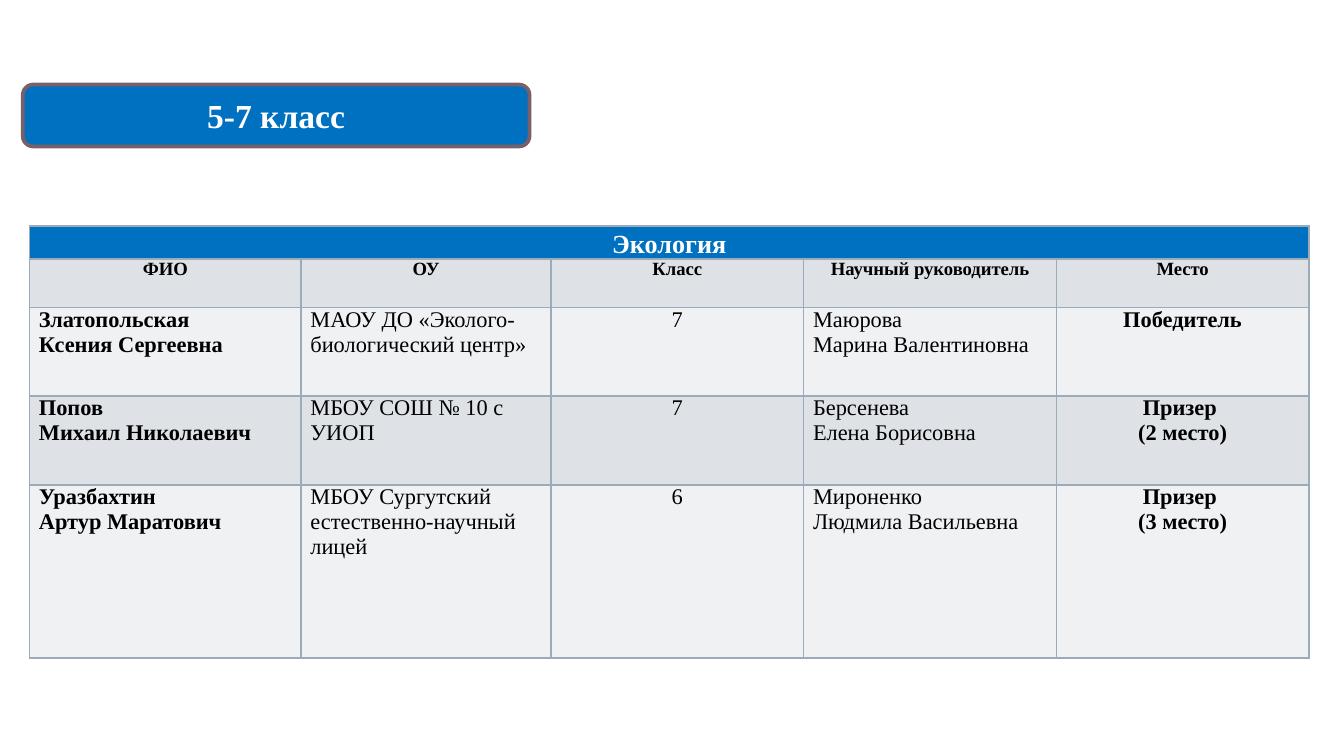
from lxml import etree
from pptx import Presentation, util as u
from pptx.dml.color import RGBColor
from pptx.enum import shapes, text
from pptx.oxml.ns import qn

GRADE = "5-7 класс"
SUBJECT = "Экология"
HEADERS = ["ФИО", "ОУ", "Класс", "Научный руководитель", "Место"]
WINNERS = [
    ["Златопольская\nКсения Сергеевна", "МАОУ ДО «Эколого-биологический центр»", "7",
     "Маюрова\nМарина Валентиновна", "Победитель"],
    ["Попов\nМихаил Николаевич", "МБОУ СОШ № 10 с УИОП", "7",
     "Берсенева\nЕлена Борисовна", "Призер \n(2 место)"],
    ["Уразбахтин\nАртур Маратович", "МБОУ Сургутский естественно-научный лицей", "6",
     "Мироненко\nЛюдмила Васильевна", "Призер \n(3 место)"],
]

THEME = {
    "font": "Times New Roman",
    "blue": "0070C0", "white": "FFFFFF", "black": "000000",
    "bands": ["DEE2E6", "EFF1F3"], "border": "9BABB9", "outline": "7B5F68",
    "badge": 18, "subject": 14, "header": 10, "body": 12,
}

SLIDE = (10, 10 * 9 / 16)
BADGE = (0.17, 0.63, 3.77, 0.46)
TABLE_AT = (0.22, 1.68)
COL_WIDTHS = [2.02, 1.86, 1.88, 1.88, 1.88]
ROW_HEIGHTS = [0.24, 0.36, 0.66, 0.66, 1.29]
CENTERED_COLS = {2, 4}
BOLD_COLS = {0, 4}


def paint(fill, color):
    fill.solid()
    fill.fore_color.rgb = RGBColor.from_string(color)


def write(tf, content, size, color="black", bold=True, center=True, spacing=1.0):
    tf.text = content
    for p in tf.paragraphs:
        p.alignment = text.PP_ALIGN.CENTER if center else text.PP_ALIGN.LEFT
        p.line_spacing = spacing
        for r in p.runs:
            style = {"name": THEME["font"], "size": u.Pt(THEME[size]), "bold": bold}
            for key, value in style.items():
                setattr(r.font, key, value)
            r.font.color.rgb = RGBColor.from_string(THEME[color])


def add_borders(cell):
    tc_pr = cell._tc.get_or_add_tcPr()
    for side in ("lnL", "lnR", "lnT", "lnB"):
        ln = etree.SubElement(tc_pr, qn(f"a:{side}"), w=str(u.Pt(1)))
        fill = etree.SubElement(ln, qn("a:solidFill"))
        etree.SubElement(fill, qn("a:srgbClr"), val=THEME["border"])


def add_badge(slide):
    sp = slide.shapes.add_shape(shapes.MSO_SHAPE.ROUNDED_RECTANGLE, *map(u.Inches, BADGE))
    sp.shadow.inherit = False
    paint(sp.fill, THEME["blue"])
    paint(sp.line.fill, THEME["outline"])
    sp.line.width = u.Pt(2)
    sp.text_frame.vertical_anchor = text.MSO_ANCHOR.MIDDLE
    write(sp.text_frame, GRADE, "badge", "white")


def add_results(slide):
    size = (sum(COL_WIDTHS), sum(ROW_HEIGHTS))
    table = slide.shapes.add_table(len(ROW_HEIGHTS), len(COL_WIDTHS),
                                   *map(u.Inches, TABLE_AT + size)).table
    for col, width in zip(table.columns, COL_WIDTHS):
        col.width = u.Inches(width)
    for row, height in zip(table.rows, ROW_HEIGHTS):
        row.height = u.Inches(height)

    margins = {"margin_left": 0.07, "margin_right": 0.07, "margin_top": 0, "margin_bottom": 0}
    for i, row in enumerate(table.rows):
        for cell in row.cells:
            for key, value in margins.items():
                setattr(cell, key, u.Inches(value))
            add_borders(cell)
            paint(cell.fill, THEME["bands"][(i - 1) % 2] if i else THEME["blue"])

    title = table.cell(0, 0)
    title.merge(table.cell(0, len(HEADERS) - 1))
    write(title.text_frame, SUBJECT, "subject", "white", spacing=1.15)
    for j, header in enumerate(HEADERS):
        write(table.cell(1, j).text_frame, header, "header")
    for i, winner in enumerate(WINNERS, start=2):
        for j, value in enumerate(winner):
            write(table.cell(i, j).text_frame, value, "body",
                  bold=j in BOLD_COLS, center=j in CENTERED_COLS)


def main():
    prs = Presentation()
    prs.slide_width, prs.slide_height = map(u.Inches, SLIDE)
    slide = prs.slides.add_slide(prs.slide_layouts[6])
    add_results(slide)
    add_badge(slide)
    prs.save("out.pptx")


if __name__ == "__main__":
    main()
